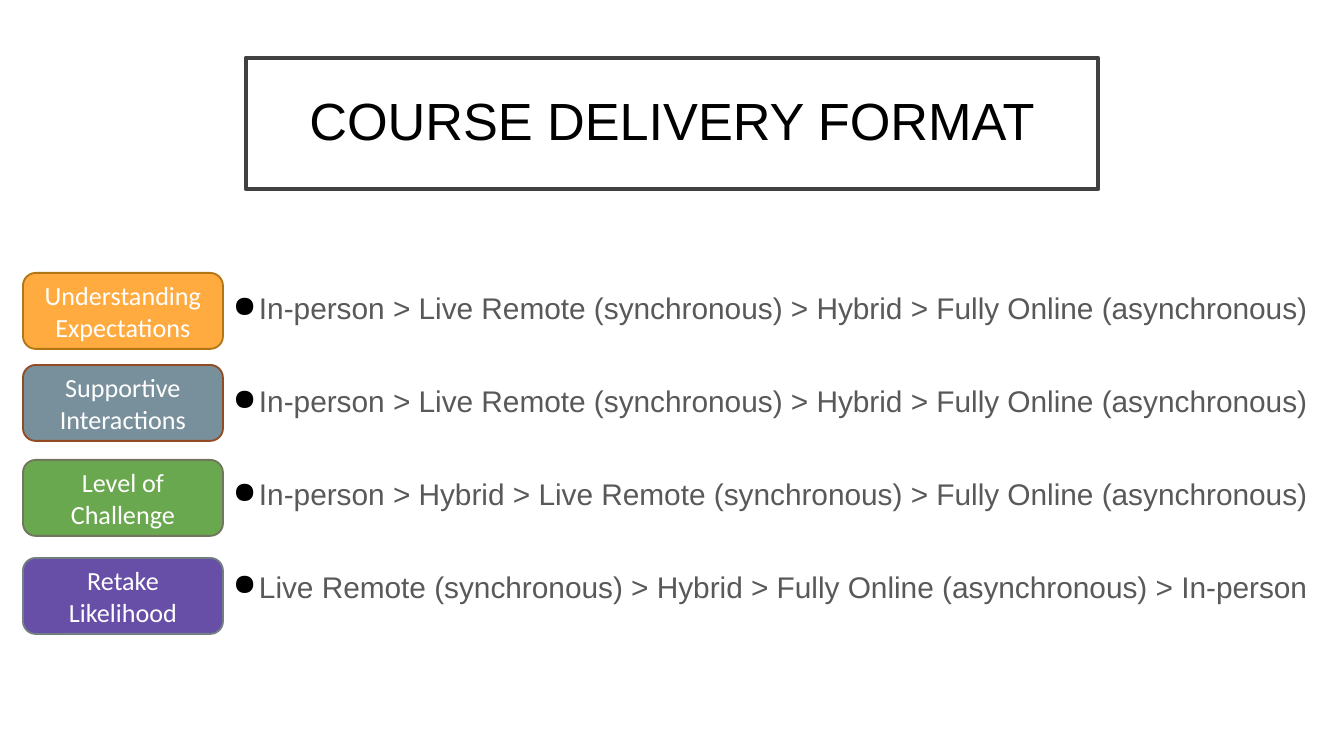
from dataclasses import dataclass

import pptx
import pptx.dml.color
import pptx.enum.shapes
import pptx.enum.text
import pptx.oxml
import pptx.oxml.ns
import pptx.util

EMU_PER_PX = 914400 / 134.4
SHAPES = pptx.enum.shapes.MSO_SHAPE
ANCHORS = pptx.enum.text.MSO_ANCHOR
CENTER = pptx.enum.text.PP_ALIGN.CENTER


@dataclass
class Box:
    left: int
    top: int
    width: int
    height: int


@dataclass
class Criterion:
    label: str
    top: int
    fill: str
    outline: str
    ranking: tuple[str, ...]


IN_PERSON = "In-person"
REMOTE = "Live Remote (synchronous)"
HYBRID = "Hybrid"
ONLINE = "Fully Online (asynchronous)"

CRITERIA = [
    Criterion("Understanding Expectations", 273, "FFAB40", "B37615",
              (IN_PERSON, REMOTE, HYBRID, ONLINE)),
    Criterion("Supportive Interactions", 365, "78909C", "924B23",
              (IN_PERSON, REMOTE, HYBRID, ONLINE)),
    Criterion("Level of Challenge", 460, "6AA84F", "71765F",
              (IN_PERSON, HYBRID, REMOTE, ONLINE)),
    Criterion("Retake Likelihood", 558, "674EA7", "717F84",
              (REMOTE, HYBRID, ONLINE, IN_PERSON)),
]


def px(length: int) -> pptx.util.Emu:
    return pptx.util.Emu(round(length * EMU_PER_PX))


def color(value: str) -> pptx.dml.color.RGBColor:
    return pptx.dml.color.RGBColor.from_string(value)


def place(box: Box) -> tuple:
    return px(box.left), px(box.top), px(box.width), px(box.height)


def set_frame(frame, side: int, end: int, anchor) -> None:
    frame.word_wrap = True
    frame.vertical_anchor = anchor
    frame.margin_left = frame.margin_right = px(side)
    frame.margin_top = frame.margin_bottom = px(end)


def add_run(paragraph, text: str, size: int, font: str, text_color: str) -> None:
    run = paragraph.add_run()
    run.text = text
    run.font.size = pptx.util.Pt(size)
    run.font.name = font
    run.font.color.rgb = color(text_color)


def add_panel(slide, kind, box: Box, fill: str, outline: str, weight: float):
    panel = slide.shapes.add_shape(kind, *place(box))
    panel.shadow.inherit = False
    panel.fill.solid()
    panel.fill.fore_color.rgb = color(fill)
    panel.line.color.rgb = color(outline)
    panel.line.width = pptx.util.Pt(weight)
    return panel


def add_bullet(paragraph, indent: int) -> None:
    properties = paragraph._p.get_or_add_pPr()
    properties.set("marL", str(px(indent)))
    properties.set("indent", str(-px(indent)))
    namespace = pptx.oxml.ns.nsdecls("a")
    for xml in (
        f'<a:buClr {namespace}><a:srgbClr val="000000"/></a:buClr>',
        f'<a:buChar {namespace} char="●"/>',
    ):
        properties.append(pptx.oxml.parse_xml(xml))


def add_title(slide, text: str) -> None:
    title = add_panel(slide, SHAPES.RECTANGLE, Box(246, 58, 852, 131),
                      "FFFFFF", "404040", 2.5)
    set_frame(title.text_frame, 20, 20, ANCHORS.MIDDLE)
    paragraph = title.text_frame.paragraphs[0]
    paragraph.alignment = CENTER
    paragraph.line_spacing = 0.9
    add_run(paragraph, text, 28, "Arial", "000000")


def add_rankings(slide, criteria: list[Criterion]) -> None:
    frame = slide.shapes.add_textbox(*place(Box(223, 289, 1154, 341))).text_frame
    set_frame(frame, 10, 5, ANCHORS.TOP)
    for index, criterion in enumerate(criteria):
        paragraph = frame.add_paragraph() if index else frame.paragraphs[0]
        paragraph.line_spacing = 0.9
        paragraph.space_before = pptx.util.Pt(32.5 if index else 0)
        add_bullet(paragraph, 26)
        add_run(paragraph, " > ".join(criterion.ranking), 16, "Arial", "595959")


def add_label(slide, criterion: Criterion) -> None:
    label = add_panel(slide, SHAPES.ROUNDED_RECTANGLE,
                      Box(23, criterion.top, 200, 76),
                      criterion.fill, criterion.outline, 1)
    set_frame(label.text_frame, 10, 5, ANCHORS.MIDDLE)
    paragraph = label.text_frame.paragraphs[0]
    paragraph.alignment = CENTER
    add_run(paragraph, criterion.label, 14, "Calibri", "FFFFFF")


def main() -> None:
    presentation = pptx.Presentation()
    presentation.slide_width = px(1344)
    presentation.slide_height = px(756)
    slide = presentation.slides.add_slide(presentation.slide_layouts[6])

    # Heading
    add_title(slide, "COURSE DELIVERY FORMAT")

    # Format rankings beside their criteria
    add_rankings(slide, CRITERIA)
    for criterion in CRITERIA:
        add_label(slide, criterion)

    presentation.save("out.pptx")


if __name__ == "__main__":
    main()
